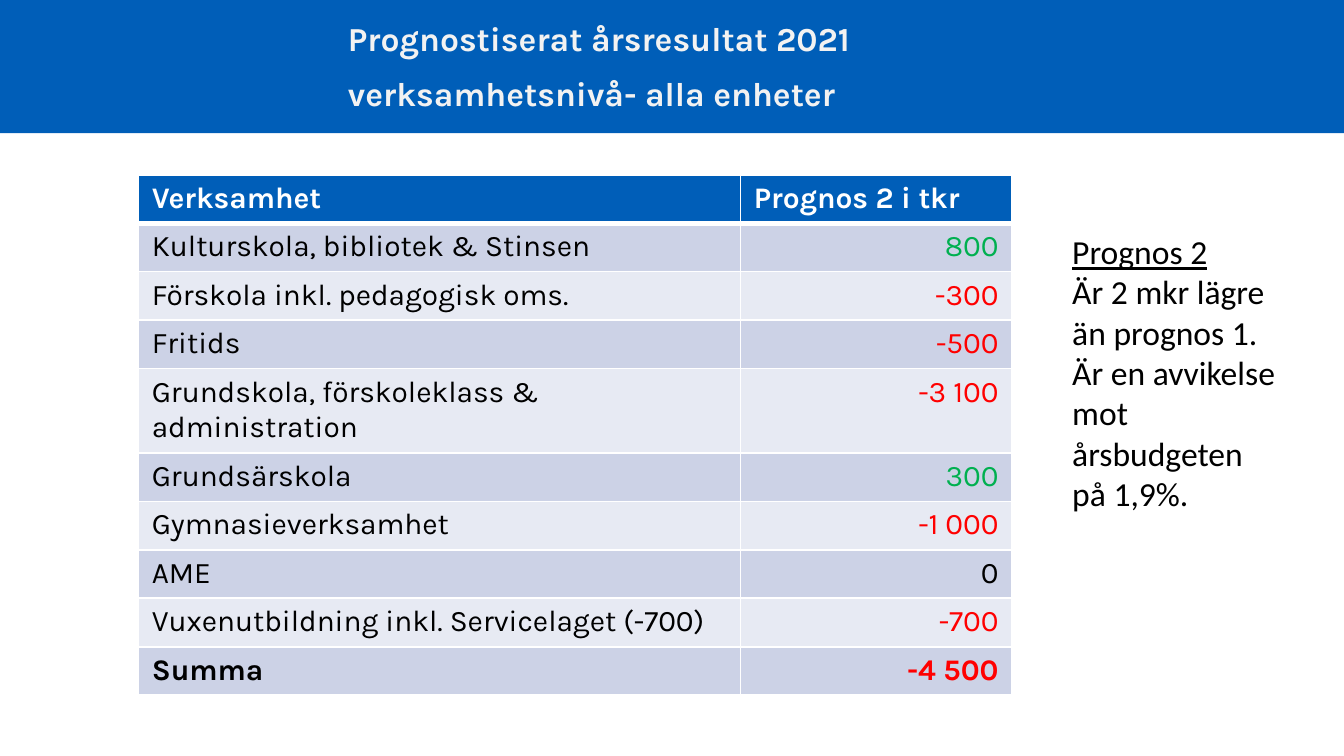
from pptx import Presentation
from pptx.util import Inches, Pt
from pptx.dml.color import RGBColor
from pptx.enum.shapes import MSO_SHAPE
from pptx.enum.text import PP_ALIGN
from pptx.oxml import parse_xml
from pptx.oxml.ns import nsdecls

BLUE = RGBColor(0x00, 0x5E, 0xB8)
WHITE = RGBColor(0xFF, 0xFF, 0xFF)
PALE = RGBColor(0xF2, 0xF2, 0xF2)
BLACK = RGBColor(0x00, 0x00, 0x00)
GREEN = RGBColor(0x00, 0xB0, 0x50)
RED = RGBColor(0xFF, 0x00, 0x00)
DARK_BAND = RGBColor(0xCC, 0xD2, 0xE6)
LIGHT_BAND = RGBColor(0xE7, 0xEA, 0xF3)


def style(para, font, size, color, bold=False):
    for run in para.runs:
        run.font.name = font
        run.font.size = Pt(size)
        run.font.color.rgb = color
        run.font.bold = bold


def set_border(cell, top, bottom):
    widths = {"lnL": 1, "lnR": 1, "lnT": top, "lnB": bottom}
    props = cell._tc.get_or_add_tcPr()
    for spot, (tag, width) in enumerate(widths.items()):
        props.insert(spot, parse_xml(
            f'<a:{tag} {nsdecls("a")} w="{Pt(width)}"><a:solidFill>'
            f'<a:srgbClr val="{WHITE}"/></a:solidFill></a:{tag}>'))


# Widescreen slide, 16:9
prs = Presentation()
prs.slide_width, prs.slide_height = Inches(10), Inches(10 * 9 / 16)
slide = prs.slides.add_slide(prs.slide_layouts[6])

# Header band
band = slide.shapes.add_shape(MSO_SHAPE.RECTANGLE, 0, 0, Inches(10), Inches(0.99))
band.shadow.inherit = False
band.fill.solid()
band.fill.fore_color.rgb = BLUE
band.line.fill.background()

# Title
title = slide.shapes.add_textbox(Inches(2.49), Inches(0.12), Inches(5.18), Inches(0.9))
frame = title.text_frame
frame.word_wrap = True
frame.text = "Prognostiserat årsresultat 2021\nverksamhetsnivå- alla enheter"
for para in frame.paragraphs:
    para.line_spacing = 0.9
    style(para, "Karla", 18, PALE, True)
frame.paragraphs[1].space_before = Pt(10)

# Forecast table
rows = [
    ("Verksamhet", "Prognos 2 i tkr"),
    ("Kulturskola, bibliotek & Stinsen", "800"),
    ("Förskola inkl. pedagogisk oms.", "-300"),
    ("Fritids", "-500"),
    ("Grundskola, förskoleklass & administration", "-3 100"),
    ("Grundsärskola", "300"),
    ("Gymnasieverksamhet", "-1 000"),
    ("AME", "0"),
    ("Vuxenutbildning inkl. Servicelaget (-700)", "-700"),
    ("Summa", "-4 500"),
]
table = slide.shapes.add_table(len(rows), 2, Inches(1.03), Inches(1.3),
                               Inches(6.5), Inches(0.34 * len(rows))).table
table.columns[0].width = Inches(4.48)
table.columns[1].width = Inches(2.02)

for r, row in enumerate(rows):
    table.rows[r].height = Inches(0.34)
    for c, text in enumerate(row):
        cell = table.cell(r, c)
        cell.margin_top = cell.margin_bottom = Pt(3.4)
        cell.text_frame.text = text
        para = cell.text_frame.paragraphs[0]
        fill, color = (DARK_BAND if r % 2 else LIGHT_BAND), BLACK
        if r == 0:
            fill, color = BLUE, WHITE
        elif c == 1:
            para.alignment = PP_ALIGN.RIGHT
            if text != "0":
                color = RED if text.startswith("-") else GREEN
        style(para, "Karla", 16, color, r in (0, len(rows) - 1))
        cell.fill.solid()
        cell.fill.fore_color.rgb = fill
        set_border(cell, 3 if r == 1 else 1, 3 if r == 0 else 1)

# Comment beside the table
note = slide.shapes.add_textbox(Inches(7.88), Inches(1.67), Inches(1.76), Inches(2.22))
frame = note.text_frame
frame.word_wrap = True
frame.text = ("Prognos 2\nÄr 2 mkr lägre än prognos 1.\n"
              "Är en avvikelse mot årsbudgeten på 1,9%.")
for para in frame.paragraphs:
    style(para, "Calibri", 18, BLACK)
frame.paragraphs[0].runs[0].font.underline = True

prs.save("out.pptx")
